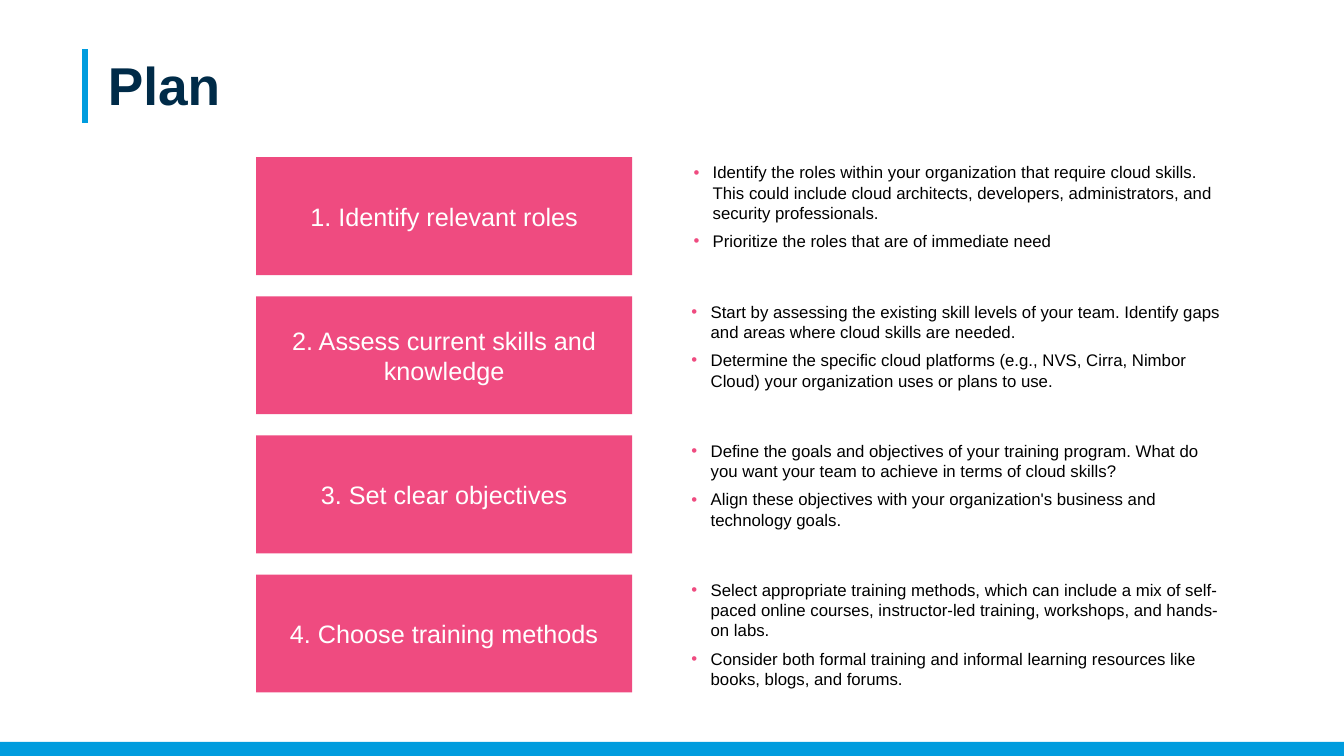
"""Build the training plan slide."""
from lxml import etree
from pptx import Presentation
from pptx import util as u
from pptx.dml.color import RGBColor
from pptx.enum import shapes, text
from pptx.oxml import ns

BLUE = RGBColor(0x00, 0x9C, 0xDE)
NAVY = RGBColor(0x00, 0x2B, 0x48)
PINK = RGBColor(0xEF, 0x4B, 0x80)
WHITE = RGBColor(0xFF, 0xFF, 0xFF)
BLACK = RGBColor(0x00, 0x00, 0x00)

TOP, STEP = 1.56, 1.38

STEPS = [
    ("1. Identify relevant roles", 6.67, 1.28, [
        "Identify the roles within your organization that require cloud skills. "
        "This could include cloud architects, developers, administrators, and "
        "security professionals.",
        "Prioritize the roles that are of immediate need"]),
    ("2. Assess current skills and knowledge", 6.65, 0.99, [
        "Start by assessing the existing skill levels of your team. Identify gaps "
        "and areas where cloud skills are needed.",
        "Determine the specific cloud platforms (e.g., NVS, Cirra, Nimbor Cloud) "
        "your organization uses or plans to use."]),
    ("3. Set clear objectives", 6.65, 0.99, [
        "Define the goals and objectives of your training program. What do you "
        "want your team to achieve in terms of cloud skills?",
        "Align these objectives with your organization's business and technology "
        "goals."]),
    ("4. Choose training methods", 6.65, 1.19, [
        "Select appropriate training methods, which can include a mix of "
        "self-paced online courses, instructor-led training, workshops, and "
        "hands-on labs.",
        "Consider both formal training and informal learning resources like "
        "books, blogs, and forums."]),
]


def assign(item, values):
    """Set each named attribute of an item."""
    for name, value in values.items():
        setattr(item, name, value)


def write(para, words, size, color, bold=False):
    """Add one styled run to a paragraph."""
    run = para.add_run()
    run.text = words
    assign(run.font, {"name": "Arial", "size": u.Pt(size), "bold": bold})
    run.font.color.rgb = color


def add_title(slide, words):
    """Place and fill the title placeholder."""
    title = slide.shapes.title
    assign(title, {"left": u.Inches(1.07), "top": u.Inches(0.62),
                   "width": u.Inches(11.35), "height": u.Inches(1.11)})
    frame = title.text_frame
    assign(frame, {"margin_left": 0, "margin_top": 0, "margin_right": 0,
                   "margin_bottom": 0, "word_wrap": True,
                   "auto_size": text.MSO_AUTO_SIZE.NONE,
                   "vertical_anchor": text.MSO_ANCHOR.TOP})
    para = frame.paragraphs[0]
    assign(para, {"alignment": text.PP_ALIGN.LEFT, "line_spacing": u.Pt(38)})
    write(para, words, 38, NAVY, True)


def add_rule(slide, x, top, bottom):
    """Draw the upright accent line beside the title."""
    rule = slide.shapes.add_connector(
        shapes.MSO_CONNECTOR.STRAIGHT,
        u.Inches(x), u.Inches(top), u.Inches(x), u.Inches(bottom))
    rule.line.color.rgb = BLUE
    rule.line.width = u.Pt(4.5)
    props = rule._element.find(ns.qn("p:spPr"))
    etree.SubElement(props, ns.qn("a:effectLst"))


def add_block(slide, area, color):
    """Draw a plain filled rectangle and return it."""
    block = slide.shapes.add_shape(
        shapes.MSO_SHAPE.RECTANGLE, *map(u.Inches, area))
    block.shadow.inherit = False
    block.fill.solid()
    block.fill.fore_color.rgb = color
    block.line.fill.background()
    return block


def add_step(slide, top, label):
    """Add a pink step box with a centred label."""
    frame = add_block(slide, (2.54, top, 3.73, 1.17), PINK).text_frame
    assign(frame, {"word_wrap": True,
                   "vertical_anchor": text.MSO_ANCHOR.MIDDLE})
    para = frame.paragraphs[0]
    para.alignment = text.PP_ALIGN.CENTER
    write(para, label, 18, WHITE)


def add_bullet(para):
    """Give a paragraph a hanging pink bullet."""
    props = para._p.get_or_add_pPr()
    props.set("marL", str(u.Inches(0.3)))
    props.set("indent", str(u.Inches(-0.19)))
    tint = etree.SubElement(props, ns.qn("a:buClr"))
    etree.SubElement(tint, ns.qn("a:srgbClr"), val=str(PINK))
    etree.SubElement(props, ns.qn("a:buFont"), typeface="Arial")
    etree.SubElement(props, ns.qn("a:buChar"), char="•")


def add_list(slide, area, items):
    """Add a bulleted text box."""
    frame = slide.shapes.add_textbox(*map(u.Inches, area)).text_frame
    assign(frame, {"word_wrap": True,
                   "auto_size": text.MSO_AUTO_SIZE.SHAPE_TO_FIT_TEXT})
    for index, item in enumerate(items):
        para = frame.add_paragraph() if index else frame.paragraphs[0]
        add_bullet(para)
        para.space_before = u.Pt(6 if index else 0)
        write(para, item, 12, BLACK)


def main():
    """Build and save the slide."""
    deck = Presentation()
    assign(deck, {"slide_width": u.Inches(13.33),
                  "slide_height": u.Inches(7.5)})
    slide = deck.slides.add_slide(deck.slide_layouts[5])
    add_rule(slide, 0.84, 0.49, 1.22)
    add_block(slide, (0, 7.36, 13.33, 0.14), BLUE)
    add_title(slide, "Plan")
    for row, (label, left, height, items) in enumerate(STEPS):
        top = TOP + row * STEP
        add_step(slide, top, label)
        add_list(slide, (left, top, 5.62, height), items)
    deck.save("out.pptx")


if __name__ == "__main__":
    main()
